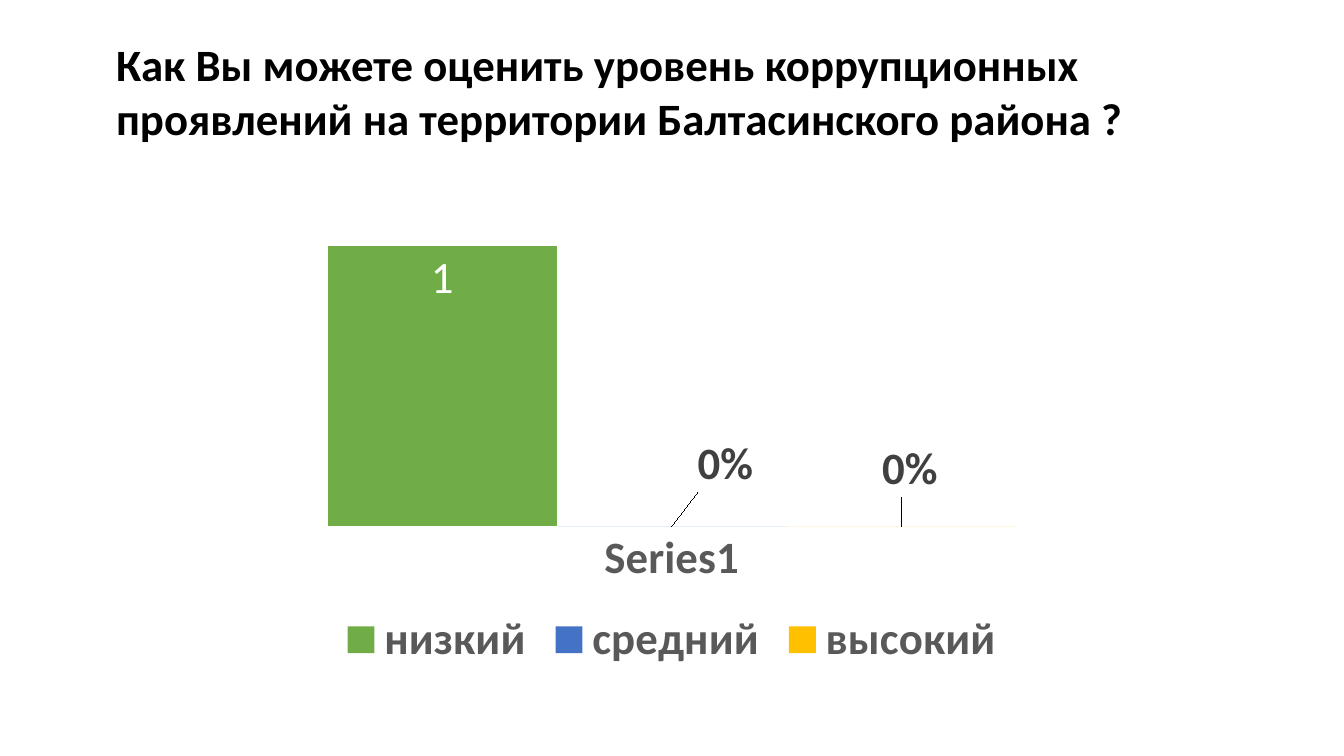
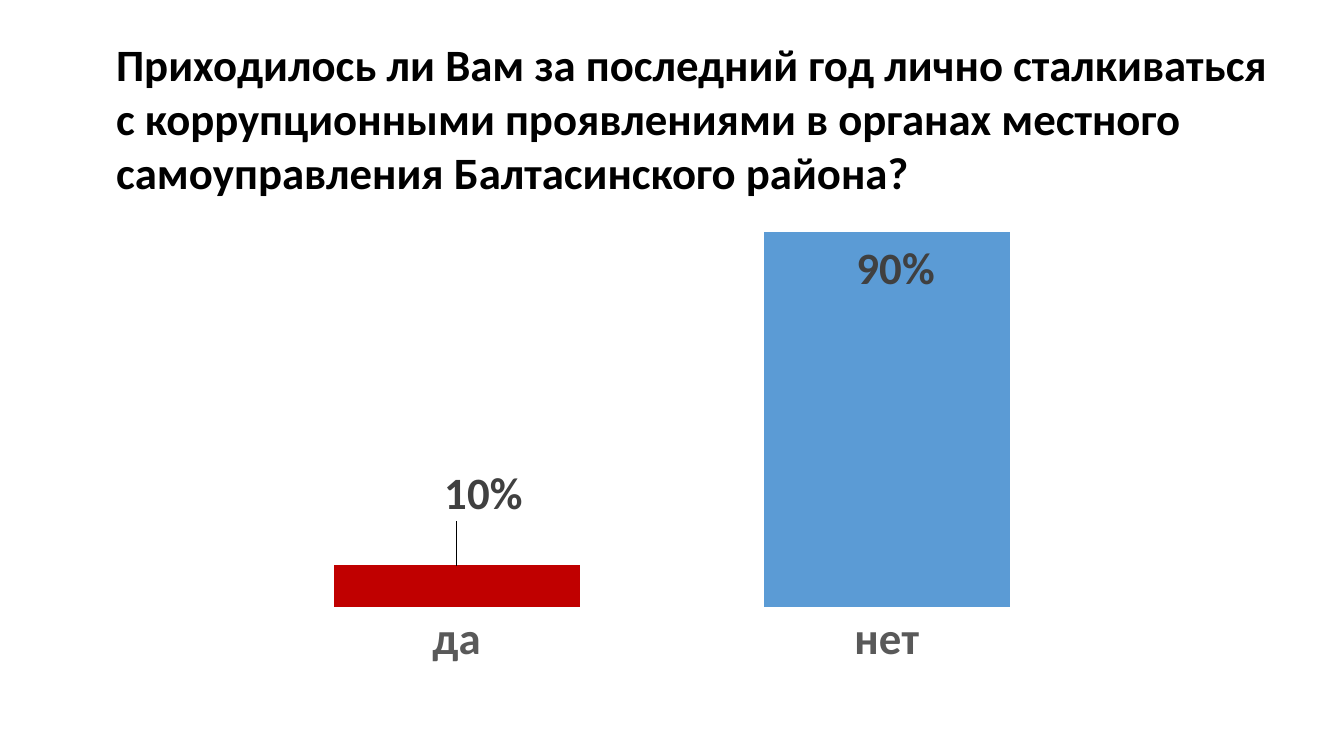
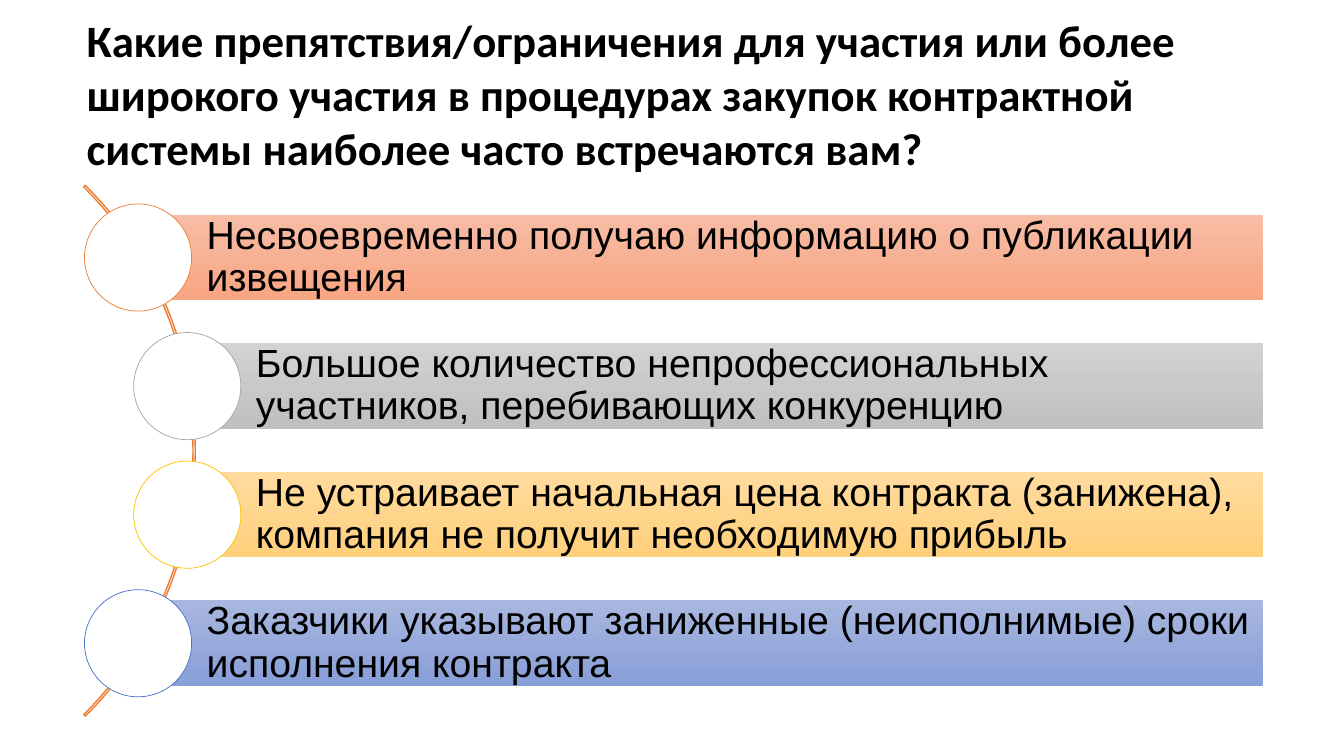
from lxml import etree
from pptx import Presentation
from pptx import util as u
from pptx.chart.data import CategoryChartData
from pptx.dml.color import RGBColor
from pptx.enum import chart as charts, shapes, text
from pptx.oxml.ns import qn

BLACK = RGBColor(0x00, 0x00, 0x00)
WHITE = RGBColor(0xFF, 0xFF, 0xFF)
AXIS_GREY = RGBColor(0x59, 0x59, 0x59)
LABEL_GREY = RGBColor(0x40, 0x40, 0x40)
GREEN = RGBColor(0x70, 0xAD, 0x47)
BLUE = RGBColor(0x44, 0x72, 0xC4)
LIGHT_BLUE = RGBColor(0x5B, 0x9B, 0xD5)
GOLD = RGBColor(0xFF, 0xC0, 0x00)
RED = RGBColor(0xC0, 0x00, 0x00)
ORANGE = RGBColor(0xED, 0x7D, 0x31)
GREY = RGBColor(0xA5, 0xA5, 0xA5)
ORANGE_FADE = RGBColor(0xF7, 0xBD, 0xA5), RGBColor(0xF8, 0xA5, 0x82)
GREY_FADE = RGBColor(0xD2, 0xD2, 0xD2), RGBColor(0xC0, 0xC0, 0xC0)
GOLD_FADE = RGBColor(0xFF, 0xDB, 0x9E), RGBColor(0xFF, 0xD0, 0x7C)
BLUE_FADE = RGBColor(0xA8, 0xB7, 0xDF), RGBColor(0x88, 0x9E, 0xD7)


class Survey:
    """Survey slides in one style, built on the current slide."""

    heading_font = "Calibri"
    body_font = "Arial"
    heading_size = u.Pt(32)
    body_size = u.Pt(28)
    bar_right, bar_height, circle_size = 31.83, 2.16, 2.7

    def __init__(self):
        self.presentation = Presentation()
        self.presentation.slide_width = u.Cm(33.87)
        self.presentation.slide_height = u.Cm(19.05)

    def style_font(self, font, color, bold=True):
        font.name, font.size, font.bold = self.heading_font, self.heading_size, bold
        font.color.rgb = color

    def add_slide(self, title, left=2.67, top=0.81, width=29.85, height=4.37):
        layout = self.presentation.slide_layouts[5]
        self.slide = self.presentation.slides.add_slide(layout)
        shape = self.slide.shapes.title
        shape.left, shape.top = u.Cm(left), u.Cm(top)
        shape.width, shape.height = u.Cm(width), u.Cm(height)
        frame = shape.text_frame
        frame.text = title
        frame.word_wrap = True
        frame.auto_size = text.MSO_AUTO_SIZE.SHAPE_TO_FIT_TEXT
        frame.vertical_anchor = text.MSO_ANCHOR.TOP
        paragraph = frame.paragraphs[0]
        paragraph.alignment = text.PP_ALIGN.LEFT
        self.style_font(paragraph.runs[0].font, BLACK)

    def add_columns(self, categories, series, maximum, legend=False):
        data = CategoryChartData(number_format="0%")
        data.categories = categories
        for name, values, _ in series:
            data.add_series(name, values)
        chart = self.slide.shapes.add_chart(
            charts.XL_CHART_TYPE.COLUMN_CLUSTERED,
            u.Cm(5.64), u.Cm(4.55), u.Cm(22.58), u.Cm(12.5), data).chart
        self.style_font(chart.font, BLACK)
        chart.has_title = False
        chart.has_legend = legend
        if legend:
            chart.legend.position = charts.XL_LEGEND_POSITION.BOTTOM
            chart.legend.include_in_layout = False
            self.style_font(chart.legend.font, AXIS_GREY)
        axis = chart.category_axis
        axis.major_tick_mark = charts.XL_TICK_MARK.NONE
        axis.format.line.fill.background()
        self.style_font(axis.tick_labels.font, AXIS_GREY)
        axis = chart.value_axis
        axis.visible = axis.has_major_gridlines = False
        axis.minimum_scale, axis.maximum_scale = 0, maximum
        plot = chart.plots[0]
        plot.gap_width, plot.overlap, plot.vary_by_categories = 75, 0, False
        for column, (_, _, color) in zip(plot.series, series):
            column.format.fill.solid()
            column.format.fill.fore_color.rgb = color
            labels = column.data_labels
            labels.show_value = True
            labels.number_format, labels.number_format_is_linked = "0%", False
            labels.position = charts.XL_LABEL_POSITION.OUTSIDE_END
            self.style_font(labels.font, LABEL_GREY)
        return plot.series

    def shift_label(self, point, x, y):
        label = point.data_label
        self.style_font(label.font, LABEL_GREY)
        label.position = charts.XL_LABEL_POSITION.OUTSIDE_END
        element = label._get_or_add_dLbl()
        layout = etree.Element(qn("c:layout"))
        manual = etree.SubElement(layout, qn("c:manualLayout"))
        for axis, value in (("x", x), ("y", y)):
            etree.SubElement(manual, qn("c:" + axis)).set("val", str(value))
        element.find(qn("c:idx")).addnext(layout)

    def add_shape(self, kind, left, top, width, height, line=None, weight=0.5):
        shape = self.slide.shapes.add_shape(
            kind, u.Cm(left), u.Cm(top), u.Cm(width), u.Cm(height))
        shape.shadow.inherit = False
        if line is None:
            shape.line.fill.background()
        else:
            shape.line.color.rgb = line
            shape.line.width = u.Pt(weight)
        return shape

    def add_arc(self):
        arc = self.add_shape(shapes.MSO_SHAPE.BLOCK_ARC, -14, 1.9, 18.92, 18.92, ORANGE, 1)
        arc.fill.background()
        for index, value in enumerate((189, 27, 0.003)):
            arc.adjustments[index] = value

    def add_answer(self, answer, left, top, fade, outline):
        bar = self.add_shape(shapes.MSO_SHAPE.RECTANGLE, left, top,
                             self.bar_right - left, self.bar_height)
        bar.fill.gradient()
        bar.fill.gradient_angle = 270
        for stop, color in zip(bar.fill.gradient_stops, fade):
            stop.color.rgb = color
        frame = bar.text_frame
        frame.text = answer
        frame.word_wrap = True
        frame.vertical_anchor = text.MSO_ANCHOR.MIDDLE
        frame.margin_left = u.Cm(1.73)
        frame.margin_top = frame.margin_right = frame.margin_bottom = u.Cm(0.2)
        paragraph = frame.paragraphs[0]
        paragraph.alignment = text.PP_ALIGN.LEFT
        paragraph.line_spacing = 0.9
        font = paragraph.runs[0].font
        font.name, font.size, font.color.rgb = self.body_font, self.body_size, BLACK
        size = self.circle_size
        circle = self.add_shape(shapes.MSO_SHAPE.OVAL, left - size / 2,
                                top + (self.bar_height - size) / 2, size, size, outline)
        circle.fill.solid()
        circle.fill.fore_color.rgb = WHITE


def main():
    survey = Survey()

    survey.add_slide("Как Вы можете оценить уровень коррупционных проявлений "
                     "на территории Балтасинского района ?", height=3)
    low, medium, high = survey.add_columns(
        ["Series1"],
        [("низкий", [1], GREEN), ("средний", [0], BLUE), ("высокий", [0], GOLD)],
        maximum=1.2, legend=True)
    label = low.points[0].data_label
    label.text_frame.text = "1"
    survey.style_font(label.text_frame.paragraphs[0].runs[0].font, WHITE, bold=False)
    label.position = charts.XL_LABEL_POSITION.INSIDE_END
    survey.shift_label(medium.points[0], 0.06, -0.06)
    survey.shift_label(high.points[0], 0.01, -0.05)

    survey.add_slide("Приходилось ли Вам за последний год лично сталкиваться "
                     "с коррупционными проявлениями в органах местного "
                     "самоуправления Балтасинского района?")
    answers, = survey.add_columns(
        ["да", "нет"], [("Series 1", [0.1, 0.9], LIGHT_BLUE)], maximum=1)
    yes, no = answers.points[0], answers.points[1]
    yes.format.fill.solid()
    yes.format.fill.fore_color.rgb = RED
    survey.shift_label(yes, 0.03, -0.08)
    survey.shift_label(no, 0.01, 0.14)

    survey.add_slide("Какие препятствия/ограничения для участия или более "
                     "широкого участия в процедурах закупок контрактной "
                     "системы наиболее часто встречаются вам?",
                     left=1.93, top=0.2, width=31.09)
    survey.add_arc()
    obstacles = [
        ("Несвоевременно получаю информацию о публикации извещения",
         3.48, ORANGE_FADE, ORANGE),
        ("Большое количество непрофессиональных участников, перебивающих конкуренцию",
         4.72, GREY_FADE, GREY),
        ("Не устраивает начальная цена контракта (занижена), "
         "компания не получит необходимую прибыль", 4.72, GOLD_FADE, GOLD),
        ("Заказчики указывают заниженные (неисполнимые) сроки исполнения контракта",
         3.48, BLUE_FADE, BLUE),
    ]
    for row, (answer, left, fade, outline) in enumerate(obstacles):
        survey.add_answer(answer, left, 5.41 + 3.24 * row, fade, outline)

    survey.presentation.save("out.pptx")


if __name__ == "__main__":
    main()
